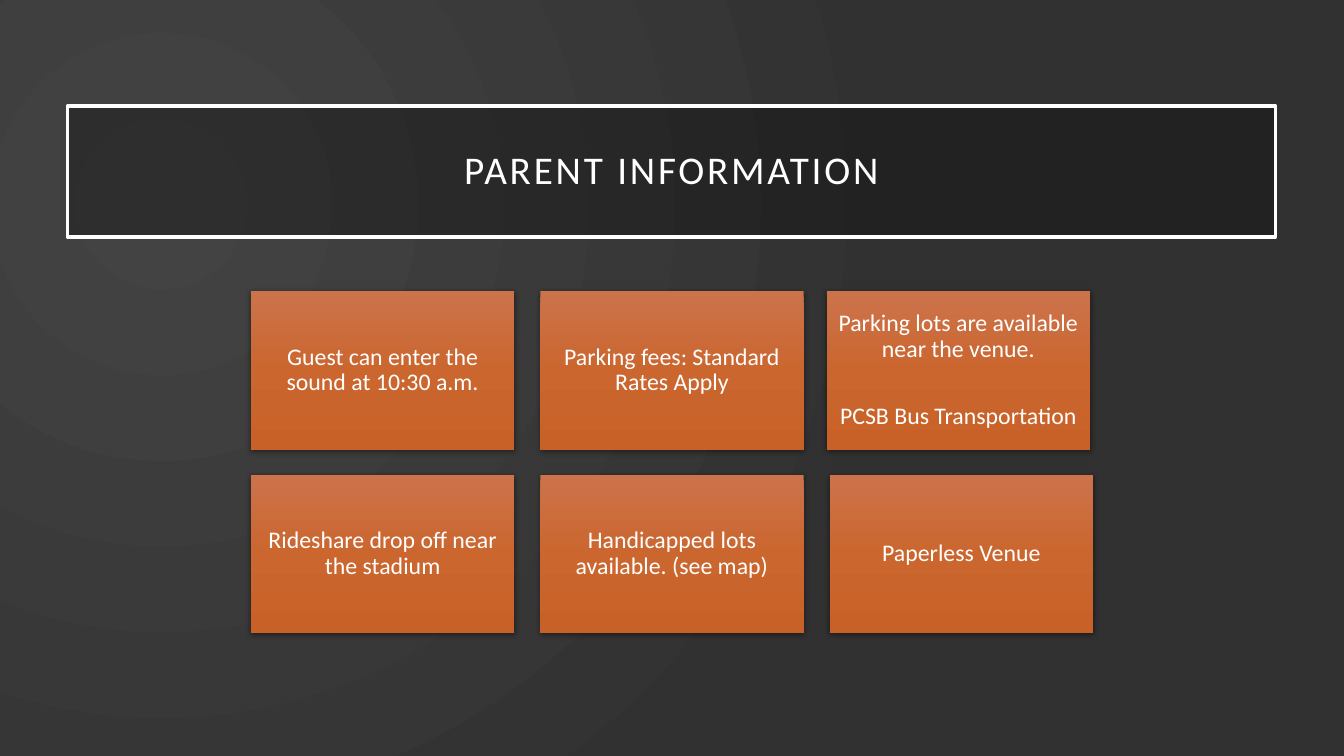
from lxml import etree
from pptx import Presentation
from pptx import util as u
from pptx.dml.color import RGBColor
from pptx.enum import shapes, text
from pptx.oxml import ns

WHITE = RGBColor(0xFF, 0xFF, 0xFF)
BLACK = RGBColor(0x00, 0x00, 0x00)
GREY_LIGHT = RGBColor(0x43, 0x43, 0x43)
GREY_DARK = RGBColor(0x31, 0x31, 0x31)
ORANGE_TOP = RGBColor(0xCC, 0x73, 0x4B)
ORANGE_MIDDLE = RGBColor(0xCB, 0x66, 0x2F)
ORANGE_BOTTOM = RGBColor(0xC8, 0x61, 0x28)

# Card grid in inches: origin, card size and step from card to card
GRID_LEFT, GRID_TOP = 2.49, 2.89
CARD_WIDTH, CARD_HEIGHT = 2.61, 1.57
STEP_X, STEP_Y = 2.87, 1.82

# Column, row, sideways shift, paragraphs
CARDS = [
    (0, 0, 0, ["Guest can enter the sound at 10:30 a.m."]),
    (1, 0, 0, ["Parking fees: Standard Rates Apply"]),
    (2, 0, -0.03, ["Parking lots are available near the venue.",
                   "PCSB Bus Transportation"]),
    (0, 1, 0, ["Rideshare drop off near the stadium"]),
    (1, 1, 0, ["Handicapped lots available. (see map)"]),
    (2, 1, 0, ["Paperless Venue"]),
]


def add_child(parent, tag, **attributes):
    child = etree.SubElement(parent, ns.qn(tag))
    for name, value in attributes.items():
        child.set(name, str(value))
    return child


def replace_with_gradient(solid_fill, stops):
    """Swap a solid fill for a gradient and return it for its direction."""
    gradient = etree.Element(ns.qn("a:gradFill"), rotWithShape="1")
    stop_list = add_child(gradient, "a:gsLst")
    for percent, color in stops:
        stop = add_child(stop_list, "a:gs", pos=percent * 1000)
        add_child(stop, "a:srgbClr", val=color)
    solid_fill.getparent().replace(solid_fill, gradient)
    return gradient


class InfoSlide:
    font = "Calibri"

    def __init__(self, presentation):
        self.slide = presentation.slides.add_slide(presentation.slide_layouts[5])

    def background(self):
        self.slide.background.fill.solid()
        solid = self.slide.element.find(".//" + ns.qn("p:bgPr"))[0]
        gradient = replace_with_gradient(solid, [(0, GREY_LIGHT), (100, GREY_DARK)])
        circle = add_child(gradient, "a:path", path="circle")
        add_child(circle, "a:fillToRect", l=50000, t=55000, r=125000, b=100000)

    def add_text(self, shape, paragraphs, size, inset, gap=0, tracking=0):
        frame = shape.text_frame
        frame.word_wrap = True
        frame.auto_size = text.MSO_AUTO_SIZE.NONE
        frame.vertical_anchor = text.MSO_ANCHOR.MIDDLE
        frame.margin_left = frame.margin_right = u.Inches(inset)
        frame.margin_top = frame.margin_bottom = u.Inches(inset)
        for index, words in enumerate(paragraphs):
            paragraph = frame.add_paragraph() if index else frame.paragraphs[0]
            paragraph.alignment = text.PP_ALIGN.CENTER
            paragraph.line_spacing = 0.9
            paragraph.space_before = u.Pt(gap if index else 0)
            run = paragraph.add_run()
            run.text = words
            run.font.name = self.font
            run.font.size = u.Pt(size)
            run.font.color.rgb = WHITE
            if tracking:
                run.font._element.set("spc", str(tracking * 100))

    def title(self, words):
        title = self.slide.shapes.title
        title.left, title.top = u.Inches(0.67), u.Inches(1.05)
        title.width, title.height = u.Inches(11.98), u.Inches(1.3)
        title.fill.solid()
        title.fill.fore_color.rgb = BLACK
        color = title.element.spPr.find(".//" + ns.qn("a:srgbClr"))
        add_child(color, "a:alpha", val=30000)
        title.line.color.rgb = WHITE
        title.line.width = u.Pt(2.5)
        self.add_text(title, [words], size=28, inset=0.2, tracking=2)

    def card(self, column, row, shift, paragraphs):
        card = self.slide.shapes.add_shape(
            shapes.MSO_SHAPE.RECTANGLE,
            u.Inches(GRID_LEFT + column * STEP_X + shift),
            u.Inches(GRID_TOP + row * STEP_Y),
            u.Inches(CARD_WIDTH), u.Inches(CARD_HEIGHT))
        card.line.fill.background()
        card.fill.solid()
        properties = card.element.spPr
        gradient = replace_with_gradient(
            properties.find(ns.qn("a:solidFill")),
            [(0, ORANGE_TOP), (50, ORANGE_MIDDLE), (100, ORANGE_BOTTOM)])
        add_child(gradient, "a:lin", ang=5400000, scaled=0)
        # Soft shadow below the card
        card.shadow.inherit = False
        shadow = add_child(properties.find(ns.qn("a:effectLst")), "a:outerShdw",
                           blurRad=u.Pt(4.4), dist=u.Pt(1.2), dir=5400000,
                           rotWithShape=0)
        color = add_child(shadow, "a:srgbClr", val=BLACK)
        add_child(color, "a:alpha", val=45000)
        self.add_text(card, paragraphs, size=17, inset=0.07, gap=30)


def main():
    presentation = Presentation()
    presentation.slide_width = u.Inches(13.33)
    presentation.slide_height = u.Inches(7.5)
    info = InfoSlide(presentation)
    info.background()
    info.title("PARENT INFORMATION")
    for card in CARDS:
        info.card(*card)
    presentation.save("out.pptx")


if __name__ == "__main__":
    main()
